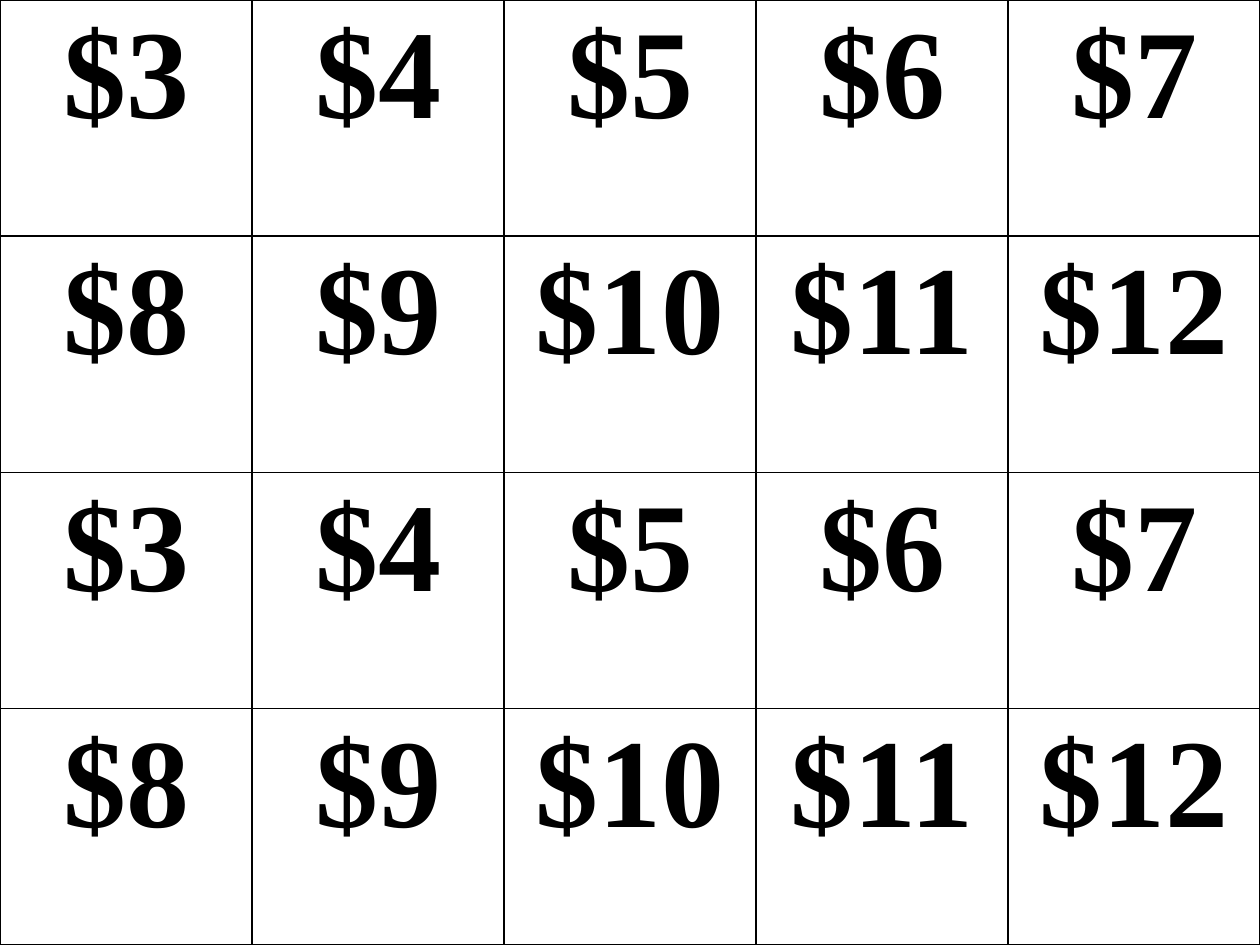
from lxml.etree import SubElement
from pptx import Presentation
from pptx.dml.color import RGBColor
from pptx.enum.text import PP_ALIGN
from pptx.oxml.ns import qn
from pptx.util import Cm, Pt

# Content: price cards, the set of two rows shown twice
PRICES = [range(3, 8), range(8, 13)] * 2
COLORS = {"ink": "000000", "paper": "FFFFFF"}
FONT = "Times New Roman"
WIDTH, HEIGHT = Cm(25.4), Cm(19.05)


def add_borders(cell):
    """Draw a thin line on all four sides of a cell."""
    props = cell._tc.get_or_add_tcPr()
    for side in ("lnL", "lnR", "lnT", "lnB"):
        line = SubElement(props, qn(f"a:{side}"), w=str(Pt(1)))
        fill = SubElement(line, qn("a:solidFill"))
        SubElement(fill, qn("a:srgbClr"), val=COLORS["ink"])


def fill_cell(cell, price):
    """Write one price card."""
    add_borders(cell)
    cell.fill.solid()
    cell.fill.fore_color.rgb = RGBColor.from_string(COLORS["paper"])
    cell.text = f"${price}"
    para = cell.text_frame.paragraphs[0]
    para.alignment = PP_ALIGN.CENTER
    font = para.font
    font.name, font.size, font.bold = FONT, Pt(72), True
    font.color.rgb = RGBColor.from_string(COLORS["ink"])


def main():
    deck = Presentation()
    deck.slide_width, deck.slide_height = WIDTH, HEIGHT
    slide = deck.slides.add_slide(deck.slide_layouts[6])

    # Grid of equal cards over the whole slide
    grid = slide.shapes.add_table(
        len(PRICES), len(PRICES[0]), 0, 0, WIDTH, HEIGHT).table
    grid.first_row = grid.horz_banding = False
    for r, row in enumerate(PRICES):
        for c, price in enumerate(row):
            fill_cell(grid.cell(r, c), price)

    deck.save("out.pptx")


if __name__ == "__main__":
    main()
